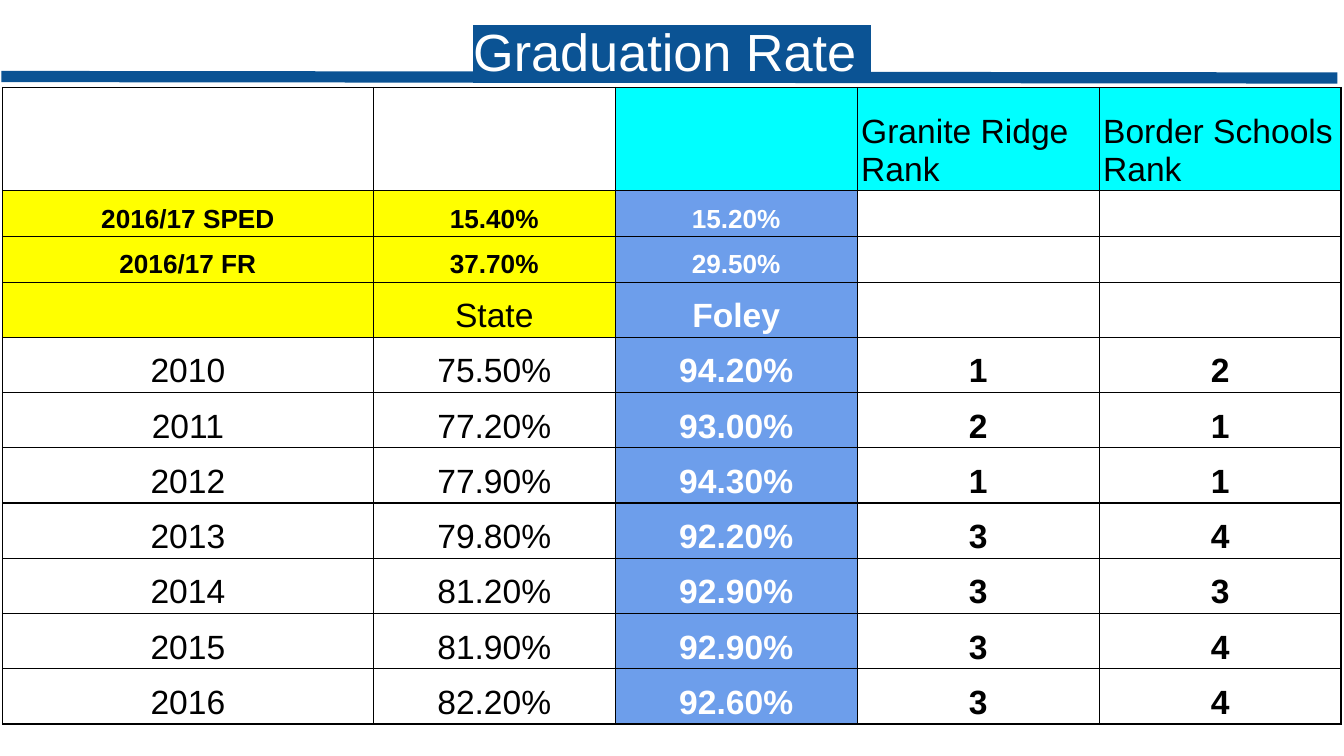
"""Build the graduation rate slide with its ranking table."""
import pptx
import pptx.dml.color
import pptx.enum.shapes
import pptx.enum.text
import pptx.oxml
import pptx.oxml.ns
import pptx.util

Pt = pptx.util.Pt
RGBColor = pptx.dml.color.RGBColor
ALIGN = pptx.enum.text.PP_ALIGN
ANCHOR = pptx.enum.text.MSO_ANCHOR

NAVY = RGBColor(0x0B, 0x53, 0x94)
BLUE = RGBColor(0x6D, 0x9E, 0xEB)
CYAN = RGBColor(0x00, 0xFF, 0xFF)
YELLOW = RGBColor(0xFF, 0xFF, 0x00)
WHITE = RGBColor(0xFF, 0xFF, 0xFF)
BLACK = RGBColor(0x00, 0x00, 0x00)

ROWS = [
    ["", "", "", "Granite Ridge Rank", "Border Schools Rank"],
    ["2016/17 SPED", "15.40%", "15.20%", "", ""],
    ["2016/17 FR", "37.70%", "29.50%", "", ""],
    ["", "State", "Foley", "", ""],
    ["2010", "75.50%", "94.20%", "1", "2"],
    ["2011", "77.20%", "93.00%", "2", "1"],
    ["2012", "77.90%", "94.30%", "1", "1"],
    ["2013", "79.80%", "92.20%", "3", "4"],
    ["2014", "81.20%", "92.90%", "3", "3"],
    ["2015", "81.90%", "92.90%", "3", "4"],
    ["2016", "82.20%", "92.60%", "3", "4"],
]
COLUMN_WIDTHS = [198.72] + [129.6] * 4
ROW_HEIGHTS = [55.44] + [23.76] * 2 + [29.6] * 8


def make_element(tag, color, attributes="", wrapped=False):
    fill = f'<a:srgbClr val="{color}"/>'
    if wrapped:
        fill = f"<a:solidFill>{fill}</a:solidFill>"
    namespace = pptx.oxml.ns.nsdecls("a")
    return pptx.oxml.parse_xml(f"<a:{tag} {namespace} {attributes}>{fill}</a:{tag}>")


def style_span(span, size, color, bold=False):
    span.font.name = "Arial"
    span.font.size = Pt(size)
    span.font.bold = bold
    span.font.color.rgb = color


deck = pptx.Presentation()
deck.slide_width = Pt(720)
deck.slide_height = Pt(405)
page = deck.slides.add_slide(deck.slide_layouts[6])

rule = page.shapes.add_connector(
    pptx.enum.shapes.MSO_CONNECTOR.STRAIGHT, Pt(0.72), Pt(41), Pt(716.4), Pt(41.8)
)
rule.line.color.rgb = NAVY
rule.line.width = Pt(6)
rule._element.spPr.append(
    pptx.oxml.parse_xml(f'<a:effectLst {pptx.oxml.ns.nsdecls("a")}/>')
)

title = page.shapes.add_textbox(Pt(0), Pt(0), Pt(720), Pt(54.72))
frame = title.text_frame
frame.word_wrap = True
frame.vertical_anchor = ANCHOR.MIDDLE
frame.margin_left = frame.margin_right = Pt(7.2)
frame.margin_top = frame.margin_bottom = Pt(7.2)
frame.text = "Graduation Rate "
para = frame.paragraphs[0]
para.alignment = ALIGN.CENTER
span = para.runs[0]
style_span(span, 28, WHITE)
text_fill = span.font._element.find(pptx.oxml.ns.qn("a:solidFill"))
text_fill.addnext(make_element("highlight", NAVY))

table = page.shapes.add_table(
    len(ROWS), len(COLUMN_WIDTHS), Pt(1.3), Pt(46.8),
    Pt(sum(COLUMN_WIDTHS)), Pt(sum(ROW_HEIGHTS)),
).table
table.first_row = False
table.horz_banding = False
for column, width in zip(table.columns, COLUMN_WIDTHS):
    column.width = Pt(width)

for r, values in enumerate(ROWS):
    table.rows[r].height = Pt(ROW_HEIGHTS[r])
    for c, value in enumerate(values):
        cell = table.cell(r, c)
        cell.vertical_anchor = ANCHOR.BOTTOM
        cell.margin_left = cell.margin_right = Pt(2.16)
        cell.margin_top = cell.margin_bottom = Pt(1.44)

        if r == 0 and c >= 2:
            color = CYAN
        elif r > 0 and c == 2:
            color = BLUE
        elif 1 <= r <= 3 and c < 2:
            color = YELLOW
        else:
            color = None
        if color is None:
            cell.fill.background()
        else:
            cell.fill.solid()
            cell.fill.fore_color.rgb = color

        properties = cell._tc.get_or_add_tcPr()
        for i, side in enumerate(["lnL", "lnR", "lnT", "lnB"]):
            properties.insert(i, make_element(side, BLACK, 'w="9525"', wrapped=True))

        if value:
            cell.text_frame.text = value
            para = cell.text_frame.paragraphs[0]
            if r > 0:
                para.alignment = ALIGN.CENTER
                if r < 9 or c == 0:
                    para.line_spacing = 1.15
            style_span(
                para.runs[0],
                14 if r in (1, 2) else 18,
                WHITE if c == 2 else BLACK,
                bold=r in (1, 2) or (r > 0 and c >= 2),
            )

deck.save("out.pptx")
